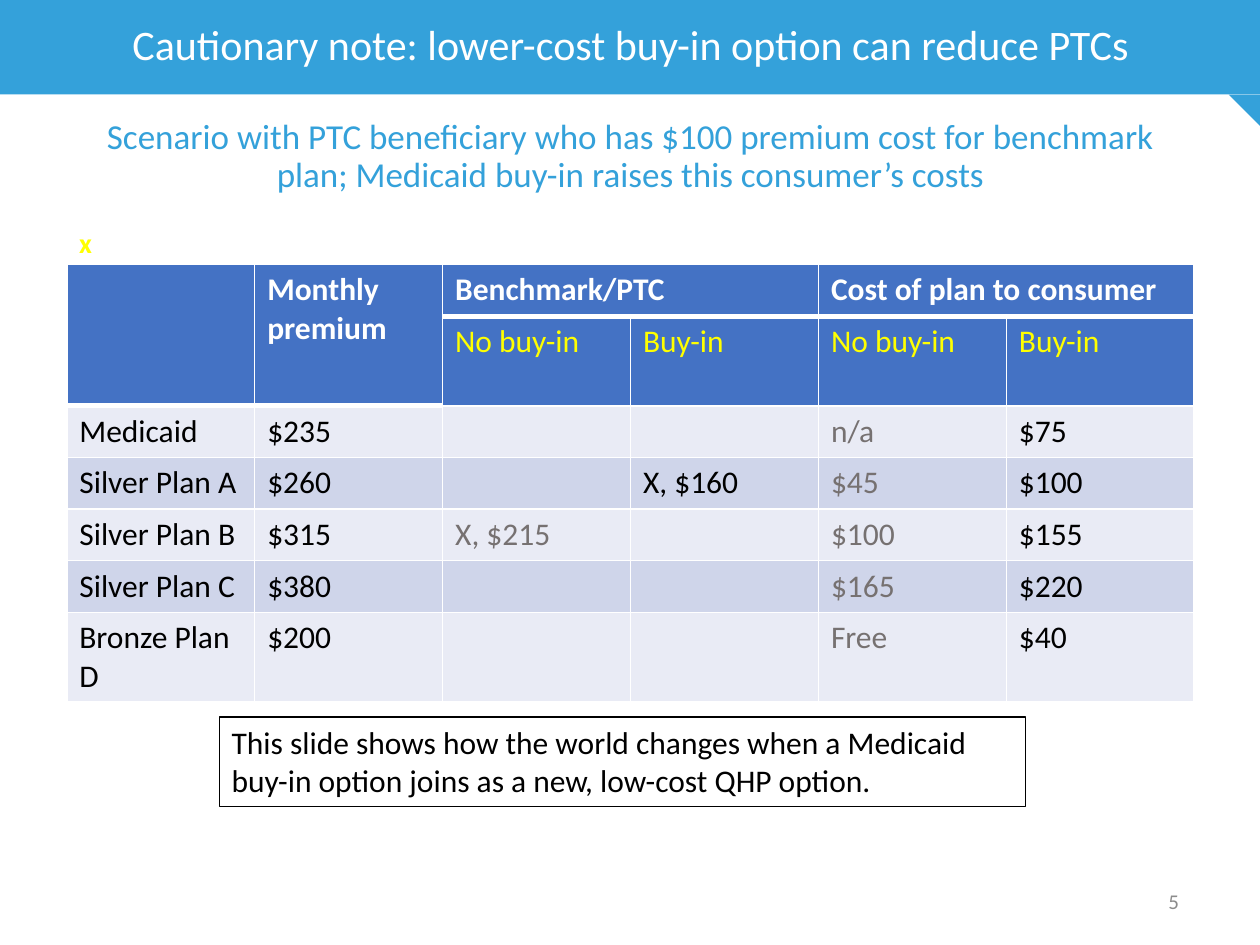
from lxml.etree import SubElement
from pptx import Presentation
from pptx.dml.color import RGBColor
from pptx.enum.shapes import MSO_SHAPE
from pptx.enum.text import MSO_ANCHOR, PP_ALIGN
from pptx.oxml.ns import qn
from pptx.util import Inches, Pt

COLORS = {
    "sky": "34A1DA", "header": "4472C4", "light": "E9EBF5", "band": "CFD5EA",
    "white": "FFFFFF", "yellow": "FFFF00", "black": "000000",
    "muted": "767171", "number": "8C8C8C",
}
LEFT, WIDTH = 0.53, 8.95
ROWS = [
    ["", "Monthly premium", "Benchmark/PTC", "", "Cost of plan to consumer", ""],
    ["", "", "No buy-in", "Buy-in", "No buy-in", "Buy-in"],
    ["Medicaid", "$235", "", "", "n/a", "$75"],
    ["Silver Plan A", "$260", "", "X, $160", "$45", "$100"],
    ["Silver Plan B", "$315", "X, $215", "", "$100", "$155"],
    ["Silver Plan C", "$380", "", "", "$165", "$220"],
    ["Bronze Plan D", "$200", "", "", "Free", "$40"],
]
ROW_HEIGHTS = [0.41, 0.7, 0.41, 0.41, 0.41, 0.41, 0.7]
MERGES = [(0, 0, 1, 0), (0, 1, 1, 1), (0, 2, 0, 3), (0, 4, 0, 5)]
NO_BUY_IN_COLUMNS = (2, 4)


def rgb(name):
    """Return the named colour."""
    return RGBColor.from_string(COLORS[name])


def write(tf, text, size, color, bold=False, align=PP_ALIGN.LEFT, spacing=1.0):
    """Put one formatted paragraph in a text frame."""
    tf.text = text
    p = tf.paragraphs[0]
    p.alignment = align
    p.line_spacing = spacing
    for r in p.runs:
        r.font.name = "Calibri"
        r.font.size = Pt(size)
        r.font.bold = bold
        r.font.color.rgb = rgb(color)


def add_text(s, box, text, size, color, **style):
    """Add a wrapped, vertically centred text box."""
    tf = s.shapes.add_textbox(*map(Inches, box)).text_frame
    tf.word_wrap = True
    tf.vertical_anchor = MSO_ANCHOR.MIDDLE
    write(tf, text, size, color, **style)


def add_block(s, kind, box, fill=None, line=None):
    """Add a preset shape with an optional fill and outline."""
    sp = s.shapes.add_shape(kind, *map(Inches, box))
    sp.shadow.inherit = False
    if fill:
        sp.fill.solid()
        sp.fill.fore_color.rgb = rgb(fill)
    else:
        sp.fill.background()
    if line:
        sp.line.color.rgb = rgb(line)
        sp.line.width = Pt(0.75)
    else:
        sp.line.fill.background()
    return sp


def set_title(s, text):
    """Place and format the title placeholder."""
    sp = s.shapes.title
    sp.left, sp.top, sp.width, sp.height = map(Inches, (LEFT, 0.77, WIDTH, 0.96))
    sp.text_frame.vertical_anchor = MSO_ANCHOR.MIDDLE
    write(sp.text_frame, text, 20, "sky", align=PP_ALIGN.CENTER, spacing=0.9)


def set_borders(cell, bottom):
    """Draw white cell borders with the given bottom width."""
    tcPr = cell._tc.get_or_add_tcPr()
    for side, width in (("L", 1), ("R", 1), ("T", 1), ("B", bottom)):
        ln = SubElement(tcPr, qn(f"a:ln{side}"), w=str(Pt(width)))
        fill = SubElement(ln, qn("a:solidFill"))
        SubElement(fill, qn("a:srgbClr"), val=COLORS["white"])


def cell_style(row, col):
    """Return the fill, text colour and boldness of a table cell."""
    if row < 2:
        return "header", "white" if row == 0 else "yellow", row == 0
    fill = "band" if row % 2 else "light"
    return fill, "muted" if col in NO_BUY_IN_COLUMNS else "black", False


def add_cost_table(s):
    """Add the table of premiums and consumer costs."""
    box = (LEFT, 2.1, WIDTH, sum(ROW_HEIGHTS))
    table = s.shapes.add_table(len(ROWS), len(ROWS[0]), *map(Inches, box)).table
    table.first_row = table.horz_banding = False
    for column in table.columns:
        column.width = Inches(WIDTH / len(ROWS[0]))
    for i, values in enumerate(ROWS):
        table.rows[i].height = Inches(ROW_HEIGHTS[i])
        for j, text in enumerate(values):
            cell = table.cell(i, j)
            fill, color, bold = cell_style(i, j)
            set_borders(cell, 3 if i == 0 or (i == 1 and j < 2) else 1)
            cell.fill.solid()
            cell.fill.fore_color.rgb = rgb(fill)
            if text:
                write(cell.text_frame, text, 18, color, bold)
    for top, left, bottom, right in MERGES:
        table.cell(top, left).merge(table.cell(bottom, right))


def add_note(s, text):
    """Add the outlined note under the table."""
    sp = add_block(s, MSO_SHAPE.RECTANGLE, (1.74, 5.69, 6.4, 0.71), line="black")
    sp.text_frame.vertical_anchor = MSO_ANCHOR.TOP
    write(sp.text_frame, text, 18, "black")


def main():
    """Build and save the slide."""
    prs = Presentation()
    prs.slide_width, prs.slide_height = Inches(10), Inches(7.5)
    s = prs.slides.add_slide(prs.slide_layouts[5])
    add_block(s, MSO_SHAPE.RECTANGLE, (0, 0, 10, 0.75), "sky")
    fold = add_block(s, MSO_SHAPE.RIGHT_TRIANGLE, (9.75, 0.75, 0.25, 0.25), "sky")
    fold.rotation = 180
    set_title(s, "Scenario with PTC beneficiary who has $100 premium cost for "
                 "benchmark plan; Medicaid buy-in raises this consumer’s costs")
    add_cost_table(s)
    add_text(s, (9.03, 6.95, 0.57, 0.4), "5", 12, "number", align=PP_ALIGN.CENTER)
    add_text(s, (LEFT, 1.76, WIDTH, 0.36), "x", 16, "yellow", bold=True, spacing=0.9)
    add_text(s, (LEFT, 0, WIDTH, 0.75),
             "Cautionary note: lower-cost buy-in option can reduce PTCs",
             24, "white", align=PP_ALIGN.CENTER, spacing=0.9)
    add_note(s, "This slide shows how the world changes when a Medicaid buy-in "
                "option joins as a new, low-cost QHP option.")
    prs.save("out.pptx")


if __name__ == "__main__":
    main()
